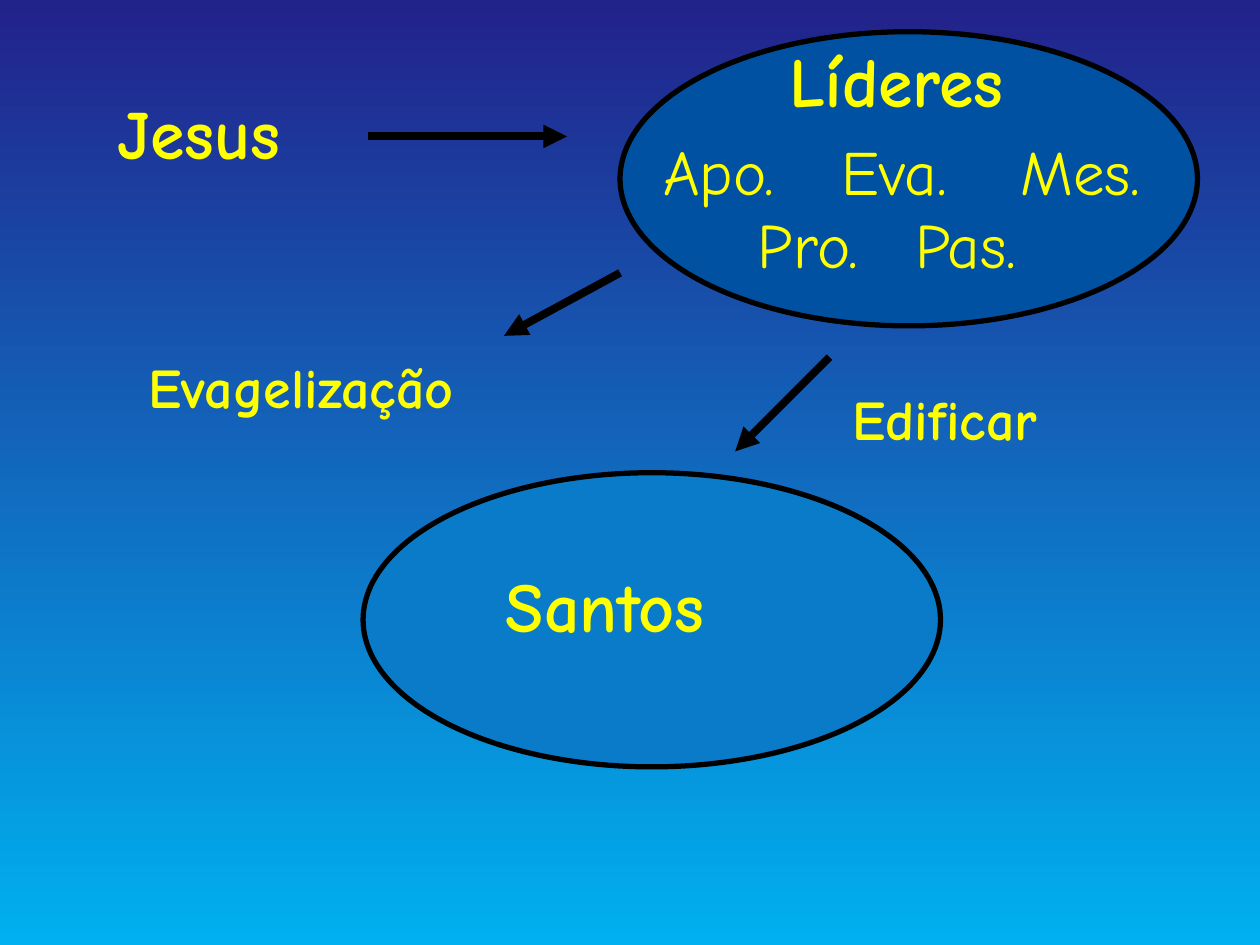
from lxml.etree import SubElement
from pptx import Presentation
from pptx.dml.color import RGBColor
from pptx.enum.shapes import MSO_CONNECTOR, MSO_SHAPE
from pptx.enum.text import MSO_AUTO_SIZE
from pptx.oxml import parse_xml
from pptx.oxml.ns import nsdecls, qn
from pptx.util import Cm, Pt

NAVY = RGBColor(0x22, 0x22, 0x8B)
SKY = RGBColor(0x00, 0xB0, 0xF0)
DEEP = RGBColor(0x00, 0x51, 0xA2)
BLUE = RGBColor(0x0A, 0x7B, 0xC8)
YELLOW = RGBColor(0xFF, 0xFF, 0x00)
BLACK = RGBColor(0x00, 0x00, 0x00)

deck = Presentation()
deck.slide_width, deck.slide_height = Cm(25.4), Cm(19.05)
slide = deck.slides.add_slide(deck.slide_layouts[6])

back = slide.background.fill
back.gradient()
back.gradient_angle = 270
for stop, color in zip(back.gradient_stops, (NAVY, SKY)):
    stop.color.rgb = color

for left, top, color in ((12.5, 0.64, DEEP), (7.32, 9.53, BLUE)):
    oval = slide.shapes.add_shape(
        MSO_SHAPE.OVAL, Cm(left), Cm(top), Cm(11.64), Cm(5.93))
    oval.shadow.inherit = False
    oval.fill.solid()
    oval.fill.fore_color.rgb = color
    oval.line.color.rgb = BLACK
    oval.line.width = Pt(3)

arrows = (
    (7.41, 2.75, 11.43, 2.75),
    (16.72, 7.2, 14.82, 9.1),
    (12.5, 5.5, 10.16, 6.77),
)
for ends in arrows:
    arrow = slide.shapes.add_connector(
        MSO_CONNECTOR.STRAIGHT, *[Cm(end) for end in ends])
    arrow.line.color.rgb = BLACK
    arrow.line.width = Pt(4.5)
    SubElement(arrow.line._get_or_add_ln(), qn("a:tailEnd"), type="triangle")
    SubElement(arrow._element.spPr, qn("a:effectLst"))

labels = (
    ("Jesus", 2.12, 1.69, 6.35, 40),
    ("Líderes", 15.66, 0.64, 6.35, 40),
    ("Apo.", 13.12, 2.54, 3.18, 36),
    ("Pro.", 15.03, 4.02, 3.18, 36),
    ("Eva.", 16.72, 2.54, 3.18, 36),
    ("Pas.", 18.2, 4.02, 3.18, 36),
    ("Mes.", 20.32, 2.54, 3.6, 36),
    ("Santos", 9.95, 11.22, 6.35, 40),
    ("Edificar", 16.93, 7.62, 6.35, 32),
    ("Evagelização", 2.75, 6.99, 7.41, 32),
)
heights = {40: 1.96, 36: 1.78, 32: 1.6}
for text, left, top, width, size in labels:
    box = slide.shapes.add_textbox(
        Cm(left), Cm(top), Cm(width), Cm(heights[size]))
    frame = box.text_frame
    frame.word_wrap = True
    frame.auto_size = MSO_AUTO_SIZE.SHAPE_TO_FIT_TEXT
    para = frame.paragraphs[0]
    para.text = text
    para.font.name = "Comic Neue"
    para.font.size = Pt(size)
    para.font.bold = size != 36
    para.font.color.rgb = YELLOW
    para._p.get_or_add_pPr().insert(0, parse_xml(
        f'<a:spcBef {nsdecls("a")}><a:spcPct val="50000"/></a:spcBef>'))

deck.save("out.pptx")
